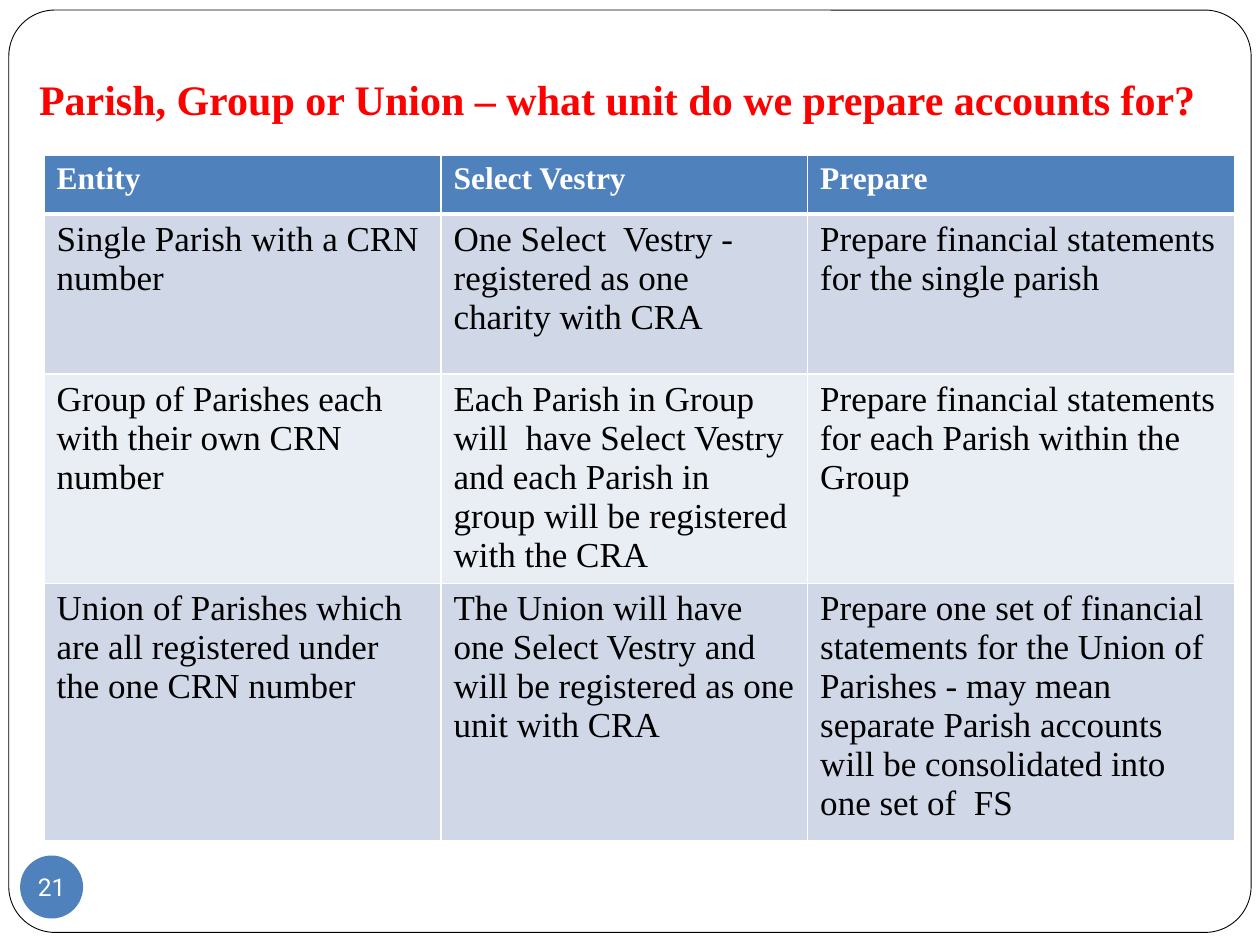
import dataclasses

import lxml.etree
import pptx
import pptx.dml.color
import pptx.enum.shapes
import pptx.enum.text
import pptx.oxml.ns
import pptx.util

Inches = pptx.util.Inches


@dataclasses.dataclass(frozen=True)
class Theme:
    font: str = "Times New Roman"
    number_font: str = "Roboto"
    title: str = "FF0000"
    accent: str = "4F81BD"
    white: str = "FFFFFF"
    black: str = "000000"
    bands: tuple = ("D0D8E8", "E9EDF4")
    title_size: int = 24
    header_size: int = 18
    body_size: int = 20
    number_size: int = 14


THEME = Theme()

COLUMN_WIDTHS = (3.15, 2.91, 3.39)
ROW_HEIGHTS = (0.47, 1.27, 1.66, 2.04)
ENTITY_ROWS = (
    ("Entity", "Select Vestry", "Prepare"),
    ("Single Parish with a CRN number",
     "One Select  Vestry - registered as one charity with CRA",
     "Prepare financial statements for the single parish"),
    ("Group of Parishes each with their own CRN number",
     "Each Parish in Group will  have Select Vestry and each Parish in group "
     "will be registered with the CRA",
     "Prepare financial statements for each Parish within the Group"),
    ("Union of Parishes which are all registered under the one CRN number",
     "The Union will have one Select Vestry and will be registered as one unit with CRA",
     "Prepare one set of financial statements for the Union of Parishes - may mean "
     "separate Parish accounts will be consolidated into one set of  FS"),
)


def rgb(color):
    return pptx.dml.color.RGBColor.from_string(color)


def write_text(text_frame, text, size, color, bold=False, font=THEME.font, align="LEFT"):
    text_frame.text = text
    paragraph = text_frame.paragraphs[0]
    paragraph.alignment = pptx.enum.text.PP_ALIGN[align]
    run_font = paragraph.runs[0].font
    run_font.name = font
    run_font.size = pptx.util.Pt(size)
    run_font.bold = bold
    run_font.color.rgb = rgb(color)


def set_insets(text_frame, left, top, right, bottom):
    text_frame.margin_left, text_frame.margin_top = Inches(left), Inches(top)
    text_frame.margin_right, text_frame.margin_bottom = Inches(right), Inches(bottom)


def add_filled_shape(slide, kind, box, fill):
    shape = slide.shapes.add_shape(kind, *map(Inches, box))
    shape.shadow.inherit = False
    shape.fill.solid()
    shape.fill.fore_color.rgb = rgb(fill)
    return shape


def add_frame(slide, box):
    frame = add_filled_shape(
        slide, pptx.enum.shapes.MSO_SHAPE.ROUNDED_RECTANGLE, box, THEME.white)
    frame.adjustments[0] = 0.05
    frame.line.color.rgb = rgb(THEME.black)
    frame.line.width = pptx.util.Pt(0.5)
    # The frame lies behind the title
    slide.shapes.title.element.addprevious(frame.element)


def place_title(slide, box, text):
    title = slide.shapes.title
    title.left, title.top, title.width, title.height = map(Inches, box)
    text_frame = title.text_frame
    write_text(text_frame, text, THEME.title_size, THEME.title, bold=True)
    set_insets(text_frame, 0.1, 0.05, 0.1, 0.1)
    text_frame.vertical_anchor = pptx.enum.text.MSO_ANCHOR.BOTTOM
    text_frame.auto_size = pptx.enum.text.MSO_AUTO_SIZE.NONE


def set_borders(cell, top, bottom):
    """Draw white cell borders; widths are in points."""
    qn = pptx.oxml.ns.qn
    properties = cell._tc.get_or_add_tcPr()
    widths = {"lnL": 1, "lnR": 1, "lnT": top, "lnB": bottom}
    for index, (side, width) in enumerate(widths.items()):
        line = lxml.etree.Element(qn(f"a:{side}"), w=str(pptx.util.Pt(width)))
        fill = lxml.etree.SubElement(line, qn("a:solidFill"))
        lxml.etree.SubElement(fill, qn("a:srgbClr"), val=THEME.white)
        properties.insert(index, line)


def add_entity_table(slide, box):
    table = slide.shapes.add_table(
        len(ROW_HEIGHTS), len(COLUMN_WIDTHS), *map(Inches, box)).table
    for column, width in zip(table.columns, COLUMN_WIDTHS):
        column.width = Inches(width)
    for row_index, (row, height) in enumerate(zip(table.rows, ROW_HEIGHTS)):
        row.height = Inches(height)
        header = row_index == 0
        fill = THEME.accent if header else THEME.bands[(row_index - 1) % 2]
        size = THEME.header_size if header else THEME.body_size
        color = THEME.white if header else THEME.black
        for cell, text in zip(row.cells, ENTITY_ROWS[row_index]):
            write_text(cell.text_frame, text, size, color, bold=header)
            cell.fill.solid()
            cell.fill.fore_color.rgb = rgb(fill)
            set_borders(cell, top=3 if row_index == 1 else 1, bottom=3 if header else 1)


def add_page_number(slide, box, number):
    badge = add_filled_shape(slide, pptx.enum.shapes.MSO_SHAPE.OVAL, box, THEME.accent)
    badge.line.fill.background()
    text_frame = badge.text_frame
    write_text(text_frame, number, THEME.number_size, THEME.white,
               font=THEME.number_font, align="CENTER")
    set_insets(text_frame, 0, 0, 0, 0)
    text_frame.word_wrap = False
    text_frame.vertical_anchor = pptx.enum.text.MSO_ANCHOR.MIDDLE


def main():
    presentation = pptx.Presentation()
    presentation.slide_width, presentation.slide_height = Inches(10), Inches(7.5)
    title_only = presentation.slide_layouts.get_by_name("Title Only")
    slide = presentation.slides.add_slide(title_only)

    add_frame(slide, (0.07, 0.08, 9.86, 7.32))
    place_title(slide, (0.21, 0.21, 9.79, 0.87),
                "Parish, Group or Union – what unit do we prepare accounts for?")
    add_page_number(slide, (0.16, 6.79, 0.5, 0.5), "21")
    add_entity_table(slide, (0.35, 1.23, sum(COLUMN_WIDTHS), sum(ROW_HEIGHTS)))

    presentation.save("out.pptx")


if __name__ == "__main__":
    main()
